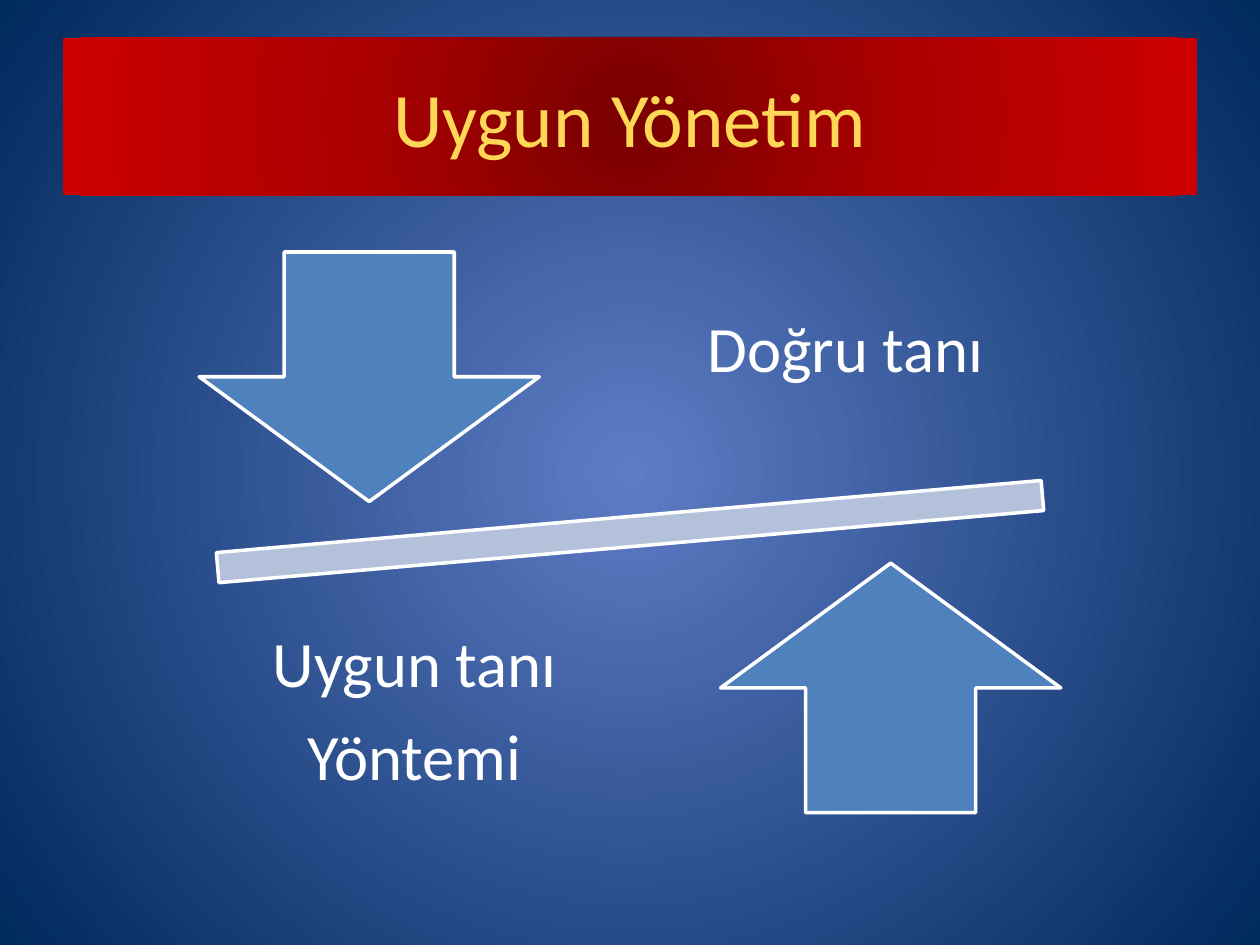
from lxml import etree
from pptx import Presentation
from pptx.dml.color import RGBColor
from pptx.enum import shapes, text
from pptx.oxml import parse_xml
from pptx.oxml.ns import qn
from pptx.util import Pt

FONT = "Calibri"
WHITE = "FFFFFF"
ARROW_BLUE = "4F81BD"
BAR_BLUE = "B3C1DB"
ARROW_SIZE = (194.4, 142.6)
LABEL_SIZE = (207.4, 149.8)
LABEL_INSET = 20.9


def color(value):
    return RGBColor.from_string(value)


def set_radial_fill(fill, parent, stops):
    fill.solid()
    solid = parent.find(qn("a:solidFill"))
    gradient = parse_xml(
        '<a:gradFill xmlns:a="http://schemas.openxmlformats.org/drawingml/2006/main" rotWithShape="1">'
        '<a:gsLst/><a:path path="circle">'
        '<a:fillToRect l="50000" t="50000" r="50000" b="50000"/>'
        '</a:path></a:gradFill>'
    )
    for position, value in stops:
        stop = etree.SubElement(gradient[0], qn("a:gs"), pos=str(position * 1000))
        etree.SubElement(stop, qn("a:srgbClr"), val=value)
    parent.replace(solid, gradient)


def place(shape, left, top, width, height):
    shape.left, shape.top = Pt(left), Pt(top)
    shape.width, shape.height = Pt(width), Pt(height)


def format_paragraph(paragraph, size, value):
    paragraph.alignment = text.PP_ALIGN.CENTER
    for run in paragraph.runs:
        run.font.name = FONT
        run.font.size = Pt(size)
        run.font.color.rgb = color(value)


def set_background(slide):
    fill = slide.background.fill
    fill.solid()
    parent = slide.element.find(".//" + qn("p:bgPr"))
    set_radial_fill(fill, parent, [(0, "5E7CC5"), (100, "00295C")])


def format_title(title, wording):
    place(title, 36, 21.6, 648, 90)
    stops = [(0, "790000"), (50, "AC0000"), (100, "CC0000")]
    set_radial_fill(title.fill, title.element.spPr, stops)
    title.text_frame.text = wording
    title.text_frame.vertical_anchor = text.MSO_ANCHOR.MIDDLE
    format_paragraph(title.text_frame.paragraphs[0], 44, "FFD757")


def add_figure(slide, kind, left, top, size, fill, rotation=0):
    shape = slide.shapes.add_shape(kind, Pt(left), Pt(top), Pt(size[0]), Pt(size[1]))
    shape.rotation = rotation
    shape.shadow.inherit = False
    shape.fill.solid()
    shape.fill.fore_color.rgb = color(fill)
    shape.line.color.rgb = color(WHITE)
    shape.line.width = Pt(2)


def add_label(slide, left, top, wording):
    width, height = LABEL_SIZE
    label = slide.shapes.add_textbox(Pt(left), Pt(top), Pt(width), Pt(height))
    frame = label.text_frame
    frame.word_wrap = True
    frame.vertical_anchor = text.MSO_ANCHOR.MIDDLE
    frame.margin_left = frame.margin_right = Pt(LABEL_INSET)
    frame.margin_top = frame.margin_bottom = Pt(LABEL_INSET)
    frame.text = wording
    for paragraph in frame.paragraphs:
        paragraph.line_spacing = 0.9
        paragraph.space_after = Pt(13)
        format_paragraph(paragraph, 37, WHITE)


def main():
    presentation = Presentation()
    presentation.slide_width, presentation.slide_height = Pt(720), Pt(540)
    slide = presentation.slides.add_slide(presentation.slide_layouts[5])
    set_background(slide)
    format_title(slide.shapes.title, "Uygun Yönetim")

    kinds = shapes.MSO_SHAPE
    add_figure(slide, kinds.MATH_MINUS, 38.2, 267.1, (643.7, 73.4), BAR_BLUE, 355)
    add_figure(slide, kinds.DOWN_ARROW, 113.8, 144, ARROW_SIZE, ARROW_BLUE)
    add_label(slide, 379.4, 126, "Doğru tanı")
    add_figure(slide, kinds.UP_ARROW, 411.8, 321.8, ARROW_SIZE, ARROW_BLUE)
    add_label(slide, 133.2, 332.6, "Uygun tanı\nYöntemi")

    presentation.save("out.pptx")


if __name__ == "__main__":
    main()
